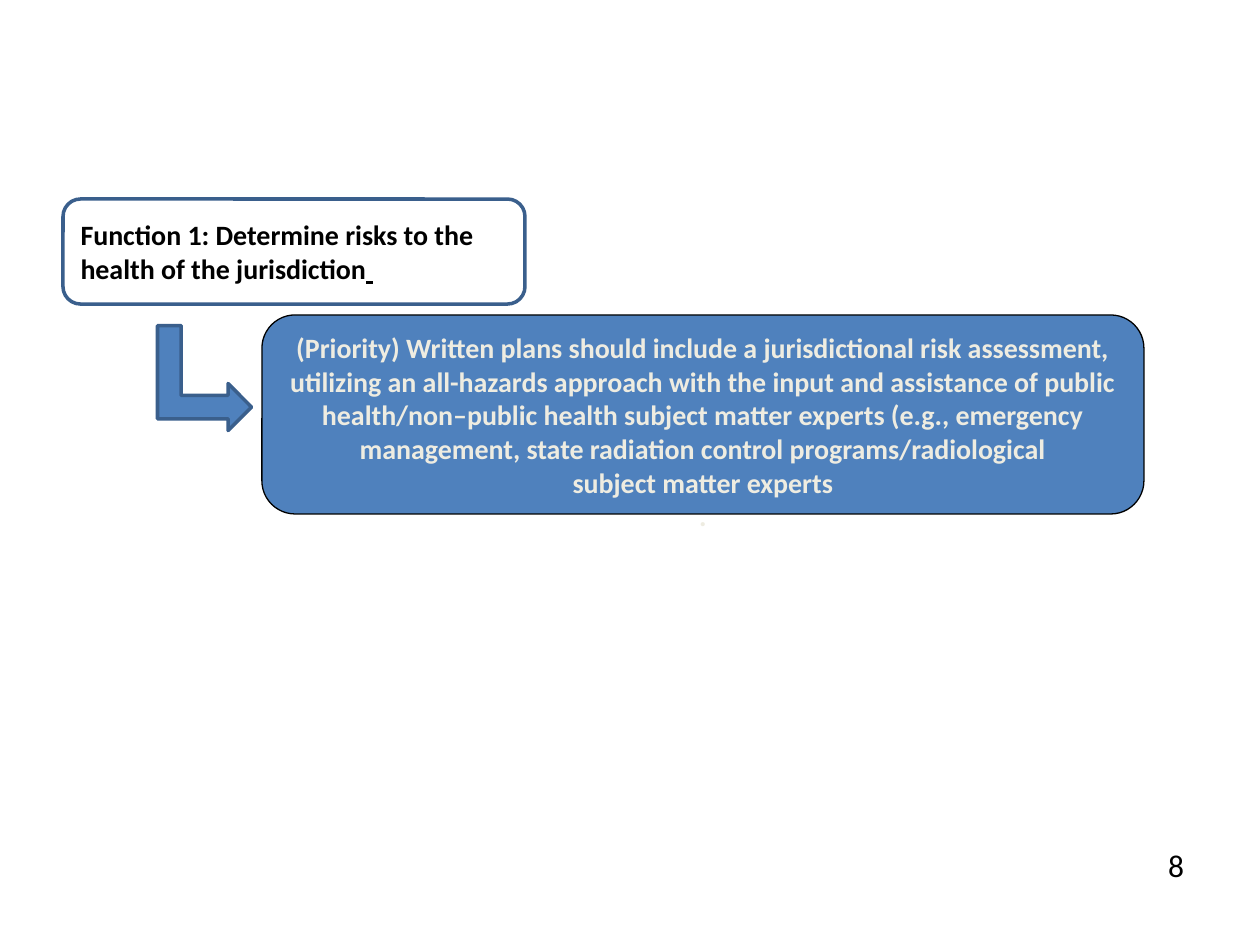
from pptx import Presentation
from pptx.dml.color import RGBColor
from pptx.enum.shapes import MSO_SHAPE
from pptx.enum.text import MSO_ANCHOR, PP_ALIGN
from pptx.util import Emu, Pt

PX = 914400 // 126
ROUNDED = MSO_SHAPE.ROUNDED_RECTANGLE
BENT_ARROW = MSO_SHAPE.BENT_UP_ARROW
TOP, MIDDLE = MSO_ANCHOR.TOP, MSO_ANCHOR.MIDDLE
LEFT, CENTER = PP_ALIGN.LEFT, PP_ALIGN.CENTER

BLUE, EDGE, BLACK, WHITE, CREAM = "4F81BD", "3A5F8C", "000000", "FFFFFF", "EEECE1"

FUNCTION = "Function 1: Determine risks to the health of the jurisdiction"
PRIORITY = [
    "(Priority) Written plans should include a jurisdictional risk assessment, "
    "utilizing an all-hazards approach with the input and assistance of public "
    "health/non–public health subject matter experts (e.g., emergency "
    "management, state radiation control programs/radiological",
    "subject matter experts",
    ".",
]


def px(*lengths):
    """Turn pixel lengths into EMU."""
    return [Emu(length * PX) for length in lengths]


def color(value):
    """Return the colour for a hex string."""
    return RGBColor.from_string(value)


def add_run(paragraph, text, **formats):
    """Add a Calibri run with the given size, colour and font values."""
    run = paragraph.add_run()
    run.text = text
    run.font.color.rgb = color(formats.pop("ink"))
    for name, value in {"name": "Calibri", **formats}.items():
        setattr(run.font, name, value)


def write(frame, lines, anchor, align, **formats):
    """Fill a text frame with one paragraph per line."""
    frame.word_wrap = True
    frame.vertical_anchor = anchor
    for index, line in enumerate(lines):
        paragraph = frame.add_paragraph() if index else frame.paragraphs[0]
        paragraph.alignment = align
        add_run(paragraph, line, **formats)


def add_block(slide, kind, box, fill, edge, weight):
    """Add a filled and outlined shape without a shadow."""
    block = slide.shapes.add_shape(kind, *px(*box))
    block.shadow.inherit = False
    block.fill.solid()
    block.fill.fore_color.rgb = color(fill)
    block.line.color.rgb = color(edge)
    block.line.width = Pt(weight)
    return block


def main():
    """Build the slide and save it."""
    deck = Presentation()
    deck.slide_width, deck.slide_height = px(1260, 945)
    slide = deck.slides.add_slide(deck.slide_layouts[6])

    page_number = slide.shapes.add_textbox(*px(1134, 840, 84, 50))
    write(page_number.text_frame, ["8"], TOP, CENTER, ink=BLACK, size=Pt(18))

    priority = add_block(slide, ROUNDED, (262, 315, 882, 199), BLUE, BLACK, 0.75)
    write(priority.text_frame, PRIORITY, TOP, CENTER, ink=CREAM, size=Pt(16), bold=True)

    arrow = add_block(slide, BENT_ARROW, (152, 331, 105, 94), BLUE, EDGE, 2)
    arrow.rotation = 90

    function = add_block(slide, ROUNDED, (63, 199, 462, 105), WHITE, EDGE, 2)
    write(function.text_frame, [FUNCTION], MIDDLE, LEFT, ink=BLACK, size=Pt(16), bold=True)
    add_run(function.text_frame.paragraphs[0], " ", ink=BLACK, size=Pt(16), underline=True)

    deck.save("out.pptx")


if __name__ == "__main__":
    main()
